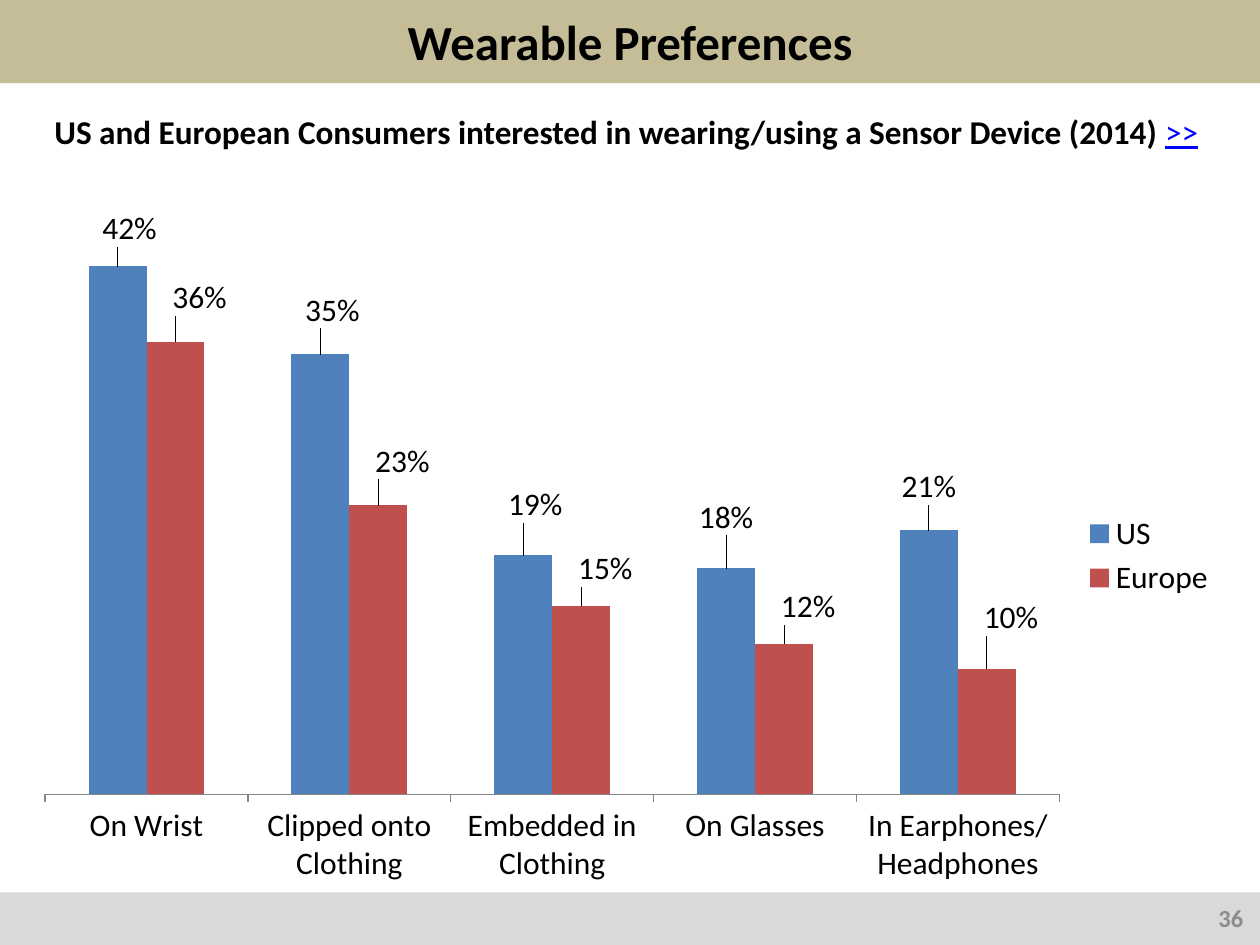
from lxml.etree import SubElement
from pptx import Presentation
from pptx.chart.data import CategoryChartData
from pptx.dml.color import RGBColor
from pptx.enum.chart import XL_CHART_TYPE, XL_LABEL_POSITION, XL_LEGEND_POSITION, XL_TICK_MARK
from pptx.enum.shapes import MSO_SHAPE
from pptx.enum.text import MSO_ANCHOR, PP_ALIGN
from pptx.oxml.ns import qn
from pptx.util import Pt

COLORS = {
    "title_band": "C4BD97", "footer_band": "D9D9D9", "text": "000000",
    "page_number": "8C8C8C", "link": "0000FF", "axis": "868686",
    "US": "4F81BD", "Europe": "C0504D",
}


def format_font(font, color, **values):
    font.name = "Calibri"
    font.color.rgb = RGBColor.from_string(COLORS[color])
    for name, value in values.items():
        setattr(font, name, value)


def add_manual_layout(parent, position, values):
    """Insert a manual chart layout with the given child values."""
    layout = parent.makeelement(qn("c:layout"))
    manual = SubElement(layout, qn("c:manualLayout"))
    for name, value in values.items():
        SubElement(manual, qn(f"c:{name}")).set("val", str(value))
    for old_layout in parent.findall(qn("c:layout")):
        parent.remove(old_layout)
    parent.insert(position, layout)


presentation = Presentation()
presentation.slide_width, presentation.slide_height = Pt(720), Pt(540)
slide = presentation.slides.add_slide(presentation.slide_layouts[5])

# Footer band
footer = slide.shapes.add_shape(MSO_SHAPE.ROUNDED_RECTANGLE, Pt(0), Pt(510), Pt(720), Pt(30))
footer.adjustments[0] = 0
footer.shadow.inherit = False
footer.fill.solid()
footer.fill.fore_color.rgb = RGBColor.from_string(COLORS["footer_band"])
footer.line.fill.background()

# Title band
title = slide.shapes.title
title.left, title.top, title.width, title.height = Pt(0), Pt(-0.5), Pt(720), Pt(48)
title.fill.solid()
title.fill.fore_color.rgb = RGBColor.from_string(COLORS["title_band"])
title.text_frame.vertical_anchor = MSO_ANCHOR.MIDDLE
paragraph = title.text_frame.paragraphs[0]
paragraph.alignment = PP_ALIGN.CENTER
run = paragraph.add_run()
run.text = "Wearable Preferences"
format_font(run.font, "text", size=Pt(28), bold=True)

# Subtitle and page number
text_boxes = [
    ((24, 60, 672, 30), MSO_ANCHOR.TOP, PP_ALIGN.LEFT, [
        ("US and European Consumers interested in wearing/using a Sensor Device (2014) ",
         "text", {"size": Pt(19), "bold": True}),
        (">>", "link", {"size": Pt(19), "bold": False, "underline": True}),
    ]),
    ((549.5, 510, 168, 29), MSO_ANCHOR.MIDDLE, PP_ALIGN.RIGHT, [
        ("36", "page_number", {"size": Pt(14), "bold": True}),
    ]),
]
for box, anchor, alignment, runs in text_boxes:
    text_frame = slide.shapes.add_textbox(*map(Pt, box)).text_frame
    text_frame.word_wrap = True
    text_frame.vertical_anchor = anchor
    paragraph = text_frame.paragraphs[0]
    paragraph.alignment = alignment
    for text, color, values in runs:
        run = paragraph.add_run()
        run.text = text
        format_font(run.font, color, **values)

# Chart data, with label shifts as fractions of the chart size
series_values = {
    "US": [0.42, 0.35, 0.19, 0.18, 0.21],
    "Europe": [0.36, 0.23, 0.15, 0.12, 0.10],
}
label_shifts = {
    "US": [(0.01, -0.02), (0.01, -0.03), (0.01, -0.04), (0, -0.04), (0, -0.03)],
    "Europe": [(0.02, -0.03), (0.02, -0.03), (0.02, -0.02), (0.02, -0.02), (0.02, -0.04)],
}
chart_data = CategoryChartData(number_format="0%")
chart_data.categories = ["On Wrist", "Clipped onto Clothing", "Embedded in Clothing",
                         "On Glasses", "In Earphones/ Headphones"]
for name, values in series_values.items():
    chart_data.add_series(name, values)

# Column chart
chart = slide.shapes.add_chart(XL_CHART_TYPE.COLUMN_CLUSTERED, Pt(12), Pt(120), Pt(690), Pt(392.5),
                               chart_data).chart
format_font(chart.font, "text", size=Pt(18))
chart.has_title = False
chart.has_legend = True
chart.legend.position = XL_LEGEND_POSITION.RIGHT
chart.legend.include_in_layout = False
add_manual_layout(chart.plots[0]._element.getparent(), 0, {
    "layoutTarget": "inner", "xMode": "edge", "yMode": "edge",
    "x": 0.02, "y": 0.02, "w": 0.84, "h": 0.83})

# Axes
chart.category_axis.major_tick_mark = XL_TICK_MARK.OUTSIDE
chart.category_axis.format.line.color.rgb = RGBColor.from_string(COLORS["axis"])
value_axis = chart.value_axis
axis_format = {"visible": False, "has_major_gridlines": False,
               "minimum_scale": 0, "maximum_scale": 0.45}
for name, value in axis_format.items():
    setattr(value_axis, name, value)
value_axis.tick_labels.number_format = "0%"
value_axis.tick_labels.number_format_is_linked = False

# Columns and their labels
plot = chart.plots[0]
plot.vary_by_categories = False
plot.gap_width, plot.overlap = 150, 0
for series in plot.series:
    series.format.fill.solid()
    series.format.fill.fore_color.rgb = RGBColor.from_string(COLORS[series.name])
    labels = series.data_labels
    label_format = {"show_value": True, "number_format": "0%", "number_format_is_linked": False,
                    "position": XL_LABEL_POSITION.OUTSIDE_END}
    for name, value in label_format.items():
        setattr(labels, name, value)
    for index, (shift_x, shift_y) in enumerate(label_shifts[series.name]):
        series.points[index].data_label.position = XL_LABEL_POSITION.OUTSIDE_END
        label = labels._element.findall(qn("c:dLbl"))[index]
        add_manual_layout(label, 1, {"x": shift_x, "y": shift_y})

presentation.save("out.pptx")
